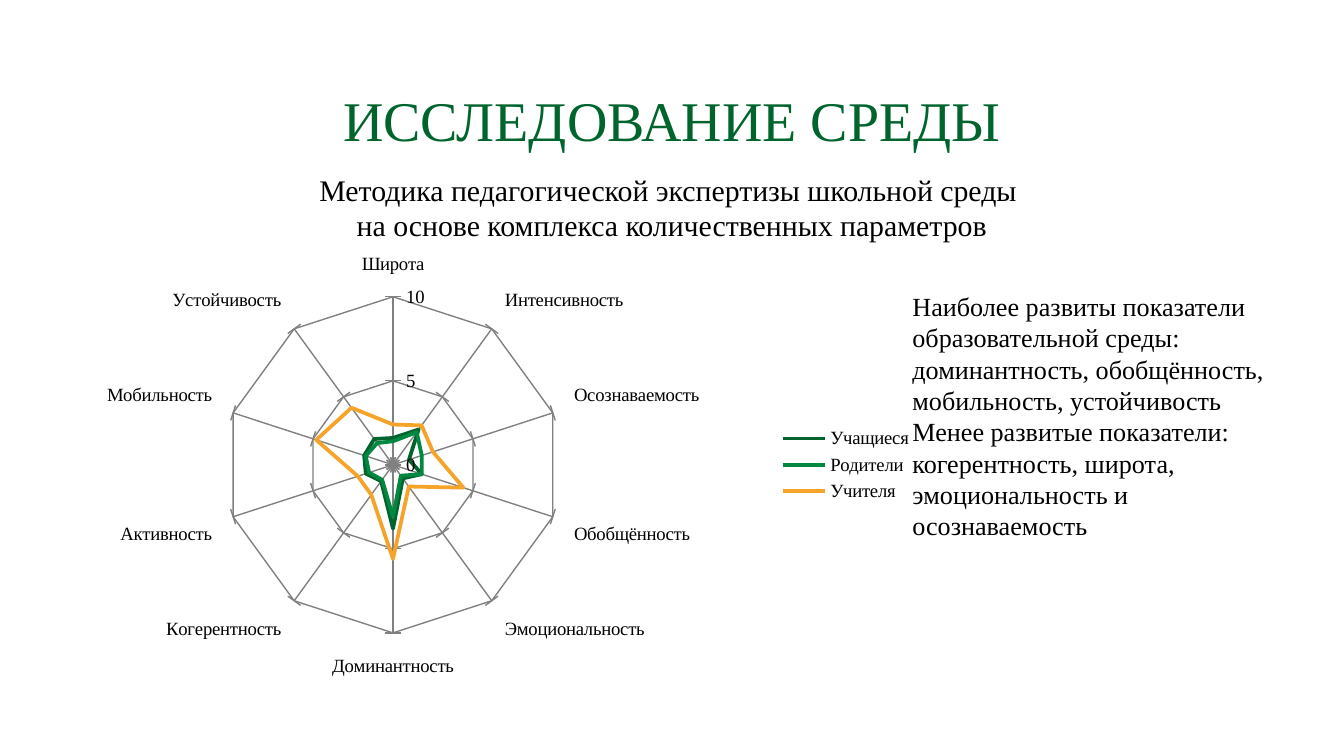
from pptx import Presentation
from pptx.chart.data import CategoryChartData
from pptx.dml.color import RGBColor
from pptx.enum.chart import XL_CHART_TYPE, XL_LEGEND_POSITION, XL_TICK_MARK
from pptx.enum.text import MSO_ANCHOR, PP_ALIGN
from pptx.oxml import parse_xml
from pptx.oxml.ns import nsdecls
from pptx.util import Pt

RADAR = XL_CHART_TYPE.RADAR
LEGEND_RIGHT = XL_LEGEND_POSITION.RIGHT
TICK_CROSS = XL_TICK_MARK.CROSS
TICK_OUTSIDE = XL_TICK_MARK.OUTSIDE
TOP = MSO_ANCHOR.TOP
MIDDLE = MSO_ANCHOR.MIDDLE
LEFT = PP_ALIGN.LEFT
CENTER = PP_ALIGN.CENTER

FONT = "Times New Roman"
BLACK = "000000"
GRAY = "808080"
GREEN = "00642D"

CATEGORIES = [
    "Широта", "Интенсивность", "Осознаваемость", "Обобщённость", "Эмоциональность",
    "Доминантность", "Когерентность", "Активность", "Мобильность", "Устойчивость",
]
SERIES = [
    ("Учащиеся", GREEN, [1.6, 2.6, 1, 1.8, 1, 3.8, 1.2, 1.7, 1.8, 1.9]),
    ("Родители", "008841", [1.4, 2.4, 1.8, 1.8, 0.8, 3.1, 1.1, 1.5, 1.7, 1.6]),
    ("Учителя", "F6A429", [2.4, 2.9, 2.5, 4.4, 1.6, 5.6, 2.2, 2.2, 4.8, 4.2]),
]
FINDINGS = [
    "Наиболее развиты показатели образовательной среды:",
    "доминантность, обобщённость, мобильность, устойчивость",
    "Менее развитые показатели:",
    "когерентность, широта, эмоциональность и осознаваемость",
]


def color(value):
    return RGBColor.from_string(value)


def style_font(font, size, fill):
    font.name = FONT
    font.size = Pt(size)
    font.color.rgb = color(fill)


def style_line(line, fill, width):
    line.color.rgb = color(fill)
    line.width = Pt(width)


def add_text(page, box, lines, size, fill=BLACK, align=LEFT, anchor=TOP,
             inset=(0, 0), wrap=True, spacing=1.0):
    shape = page.shapes.add_textbox(*map(Pt, box))
    frame = shape.text_frame
    frame.word_wrap = wrap
    frame.vertical_anchor = anchor
    frame.margin_left = frame.margin_right = Pt(inset[0])
    frame.margin_top = frame.margin_bottom = Pt(inset[1])
    for index, line in enumerate(lines):
        para = frame.paragraphs[0] if index == 0 else frame.add_paragraph()
        para.alignment = align
        para.line_spacing = spacing
        span = para.add_run()
        span.text = line
        style_font(span.font, size, fill)


def add_heading(page, box):
    left, top, width, height = box
    add_text(page, (left, top, width, 32.4), ["ИССЛЕДОВАНИЕ СРЕДЫ"], 30,
             fill=GREEN, align=CENTER, spacing=0.9)
    add_text(page, (left + 39.6, top + 28.1, width - 79.2, height - 28.1),
             ["Методика педагогической экспертизы школьной среды ",
              "на основе комплекса количественных параметров"],
             16, align=CENTER, anchor=MIDDLE, wrap=False)


def set_plot_layout(chart, left, top, width, height):
    layout = parse_xml(
        f'<c:layout {nsdecls("c")}><c:manualLayout><c:layoutTarget val="inner"/>'
        '<c:xMode val="edge"/><c:yMode val="edge"/>'
        f'<c:x val="{left}"/><c:y val="{top}"/><c:w val="{width}"/><c:h val="{height}"/>'
        '</c:manualLayout></c:layout>')
    plot_area = chart._chartSpace.chart.plotArea
    for old in plot_area.findall(layout.tag):
        plot_area.remove(old)
    plot_area.insert(0, layout)


def add_radar(page, box):
    data = CategoryChartData()
    data.categories = CATEGORIES
    for name, _, values in SERIES:
        data.add_series(name, values)
    chart = page.shapes.add_chart(RADAR, *map(Pt, box), data).chart
    style_font(chart.font, 10, BLACK)
    chart.has_title = False
    chart.has_legend = True
    chart.legend.position = LEGEND_RIGHT
    chart.legend.include_in_layout = False
    set_plot_layout(chart, 0.21, 0.13, 0.38, 0.74)

    value_axis = chart.value_axis
    value_axis.minimum_scale = 0
    value_axis.maximum_scale = 10
    value_axis.major_unit = 5
    value_axis.major_tick_mark = TICK_CROSS
    value_axis.tick_labels.number_format = "General"
    value_axis.tick_labels.number_format_is_linked = False
    chart.category_axis.major_tick_mark = TICK_OUTSIDE
    for axis in (chart.category_axis, value_axis):
        axis.has_major_gridlines = True
        style_line(axis.major_gridlines.format.line, GRAY, 0.75)
        style_line(axis.format.line, GRAY, 0.75)

    chart.plots[0].vary_by_categories = False
    for series, (_, fill, _) in zip(chart.plots[0].series, SERIES):
        series.smooth = False
        style_line(series.format.line, fill, 2)


def add_findings(page, box):
    add_text(page, box, FINDINGS, 14, inset=(7.2, 3.6))


def main():
    deck = Presentation()
    deck.slide_width = Pt(720)
    deck.slide_height = Pt(405)
    page = deck.slides.add_slide(deck.slide_layouts[6])
    add_heading(page, (0, 49.7, 720, 94.3))
    add_findings(page, (481.7, 151.9, 209.5, 143.3))
    add_radar(page, (20.2, 127.4, 475.9, 243.4))
    deck.save("out.pptx")


if __name__ == "__main__":
    main()
